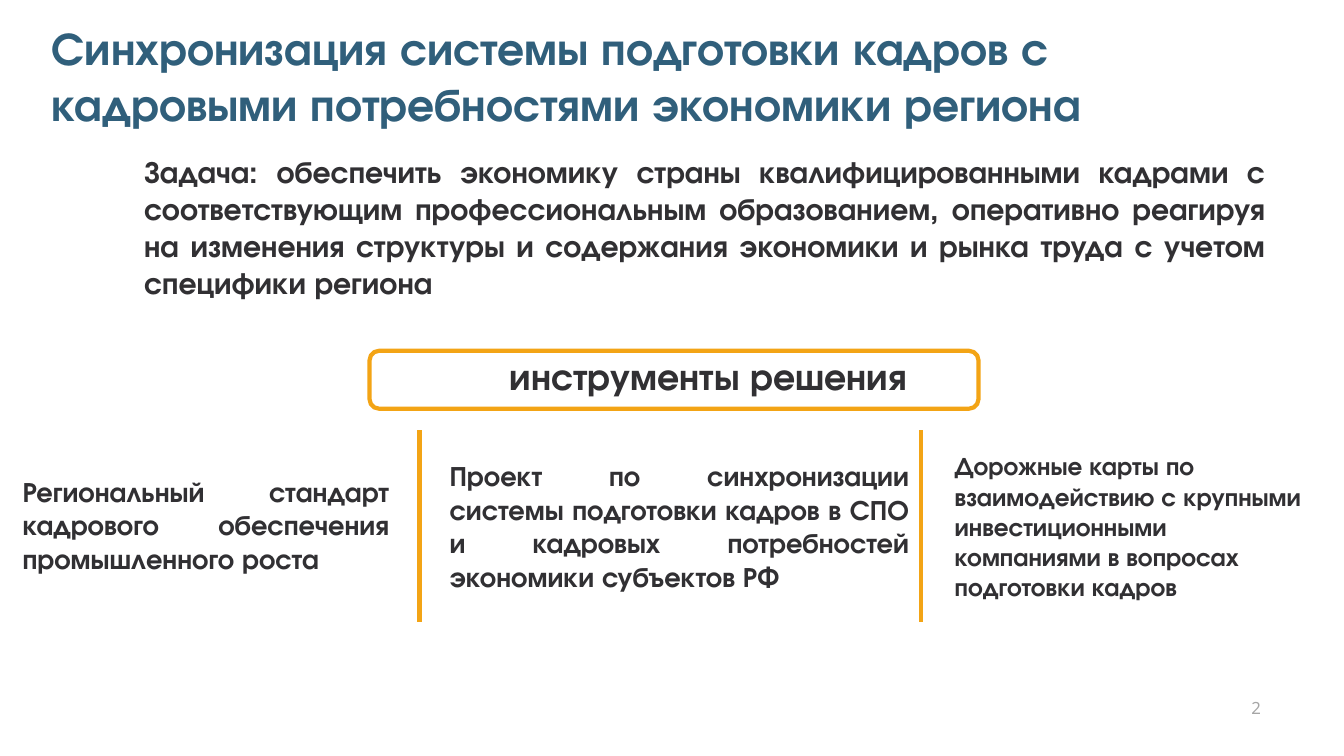
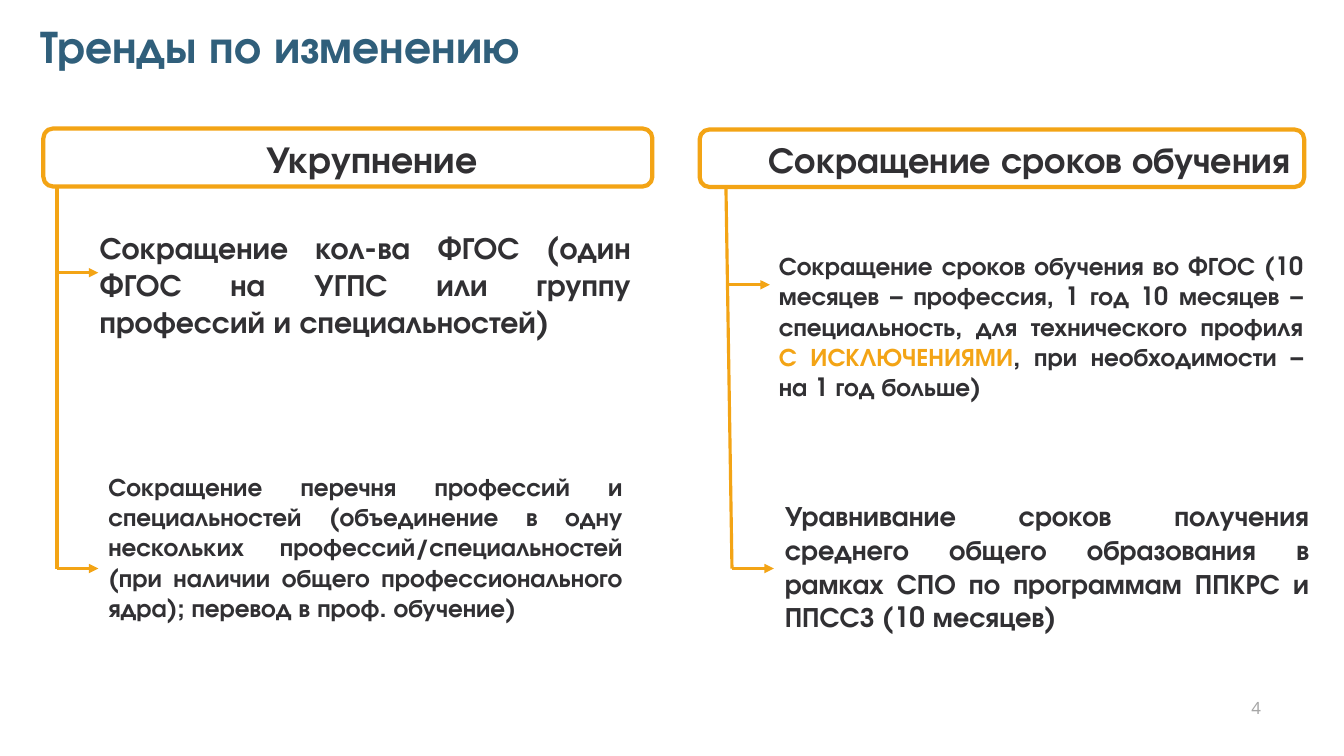
from lxml import etree
from pptx import Presentation
from pptx.dml.color import RGBColor
from pptx.enum.shapes import MSO_CONNECTOR, MSO_SHAPE
from pptx.enum.text import MSO_ANCHOR, PP_ALIGN
from pptx.oxml.ns import qn
from pptx.util import Pt

PX = 9144
BLUE = RGBColor(0x30, 0x5F, 0x7B)
DARK = RGBColor(0x31, 0x30, 0x33)
ORANGE = RGBColor(0xF3, 0xA4, 0x15)
GREY = RGBColor(0xA6, 0xA6, 0xA6)
FONT = "TeX Gyre Adventor"
NUMBER_FONT = "Noto Sans"
LEFT, RIGHT, JUSTIFY = PP_ALIGN.LEFT, PP_ALIGN.RIGHT, PP_ALIGN.JUSTIFY
TOP, MIDDLE, BOTTOM = MSO_ANCHOR.TOP, MSO_ANCHOR.MIDDLE, MSO_ANCHOR.BOTTOM
STRAIGHT = MSO_CONNECTOR.STRAIGHT
ROUNDED = MSO_SHAPE.ROUNDED_RECTANGLE


def px(*lengths):
    """Turn px lengths into EMU."""
    return [n * PX for n in lengths]


def add_text(s, box, text, size, color=DARK, align=JUSTIFY, anchor=MIDDLE,
             font=FONT, bold=True, accent=None):
    """Add a one-paragraph text box, with an optional accented phrase."""
    tf = s.shapes.add_textbox(*px(*box)).text_frame
    tf.word_wrap = True
    tf.vertical_anchor = anchor
    p = tf.paragraphs[0]
    p.alignment = align
    p.font.size = Pt(size)
    p.font.name = font
    p.font.bold = bold
    p.font.color.rgb = color
    before, phrase, after = text.partition(accent) if accent else (text, "", "")
    for part in filter(None, (before, phrase, after)):
        r = p.add_run()
        r.text = part
        if part == accent:
            r.font.color.rgb = ORANGE


def add_slide(prs, number, title, title_box):
    """Add a blank slide with its title and page number."""
    s = prs.slides.add_slide(prs.slide_layouts[6])
    add_text(s, (2448, 1379, 63, 50), number, 24, GREY, RIGHT, BOTTOM,
             NUMBER_FONT, False)
    add_text(s, title_box, title, 66, BLUE, LEFT, TOP)
    return s


def add_heading(s, frame, box, text, size=54):
    """Add a rounded orange frame and the heading over it."""
    sp = s.shapes.add_shape(ROUNDED, *px(*frame))
    sp.shadow.inherit = False
    sp.fill.background()
    sp.line.color.rgb = ORANGE
    sp.line.width = Pt(6)
    add_text(s, box, text, size, align=RIGHT)


def add_line(s, start, end, width=4.5, arrow=False):
    """Add a straight orange line, with an arrowhead if asked."""
    c = s.shapes.add_connector(STRAIGHT, *px(*start, *end))
    c.line.color.rgb = ORANGE
    c.line.width = Pt(width)
    if arrow:
        etree.SubElement(c.line._get_or_add_ln(), qn("a:tailEnd"), type="triangle")
    etree.SubElement(c._element.spPr, qn("a:effectLst"))


def add_branch(s, start, end, arrows):
    """Add a spine and the arrows, given as (x, y, length), that leave it."""
    add_line(s, start, end)
    for x, y, length in arrows:
        add_line(s, (x, y), (x + length, y), arrow=True)


def build_sync_slide(prs):
    """Build the slide on matching training to the regional economy."""
    s = add_slide(prs, "2", "Синхронизация системы подготовки кадров с кадровыми "
                  "потребностями экономики региона", (93, 34, 2353, 232))
    add_text(s, (276, 299, 2245, 303),
             "Задача: обеспечить экономику страны квалифицированными кадрами с "
             "соответствующим профессиональным образованием, оперативно реагируя "
             "на изменения структуры и содержания экономики и рынка труда с учетом "
             "специфики региона", 44, anchor=TOP)
    add_heading(s, (733, 696, 1208, 115), (896, 694, 913, 101), "инструменты решения")
    for x in (832, 1827):
        add_line(s, (x, 854), (x, 1234), width=6)
    tools = [
        ((35, 935, 747, 212), 40, JUSTIFY,
         "Региональный стандарт кадрового обеспечения промышленного роста"),
        ((882, 904, 931, 279), 40, JUSTIFY,
         "Проект по синхронизации системы подготовки кадров в СПО и кадровых "
         "потребностей экономики субъектов РФ"),
        ((1884, 857, 714, 374), 36, LEFT,
         "Дорожные карты по взаимодействию с крупными инвестиционными "
         "компаниями в вопросах подготовки кадров"),
    ]
    for box, size, align, text in tools:
        add_text(s, box, text, size, align=align)


def build_trends_slide(prs):
    """Build the slide on the two trends of change."""
    s = add_slide(prs, "4", "Тренды по изменению", (70, 29, 1069, 121))
    add_heading(s, (86, 255, 1208, 115), (475, 263, 482, 101), "Укрупнение")
    add_branch(s, (113, 371), (113, 1128), [(113, 541, 82), (113, 1128, 82)])
    add_text(s, (188, 448, 1074, 232),
             "Сокращение кол-ва ФГОС (один ФГОС на УГПС или группу профессий и "
             "специальностей)", 44)
    add_text(s, (205, 898, 1040, 374),
             "Сокращение перечня профессий и специальностей (объединение в одну "
             "нескольких профессий/специальностей (при наличии общего "
             "профессионального ядра); перевод в проф. обучение)", 36)

    add_heading(s, (1388, 257, 1199, 114), (1363, 264, 1207, 101),
                "Сокращение сроков обучения", 52)
    add_branch(s, (1440, 371), (1452, 1128), [(1444, 565, 83), (1452, 1128, 83)])
    add_text(s, (1535, 460, 1060, 374),
             "Сокращение сроков обучения во ФГОС (10 месяцев – профессия, 1 год "
             "10 месяцев – специальность, для технического профиля С ИСКЛЮЧЕНИЯМИ, "
             "при необходимости – на 1 год больше)", 36, accent="С ИСКЛЮЧЕНИЯМИ")
    add_text(s, (1547, 985, 1060, 279),
             "Уравнивание сроков получения среднего общего образования в рамках "
             "СПО по программам ППКРС и ППССЗ (10 месяцев)", 40, anchor=TOP)


def main():
    """Build and save the presentation."""
    prs = Presentation()
    prs.slide_width, prs.slide_height = px(2666, 1500)
    build_sync_slide(prs)
    build_trends_slide(prs)
    prs.save("out.pptx")


if __name__ == "__main__":
    main()
